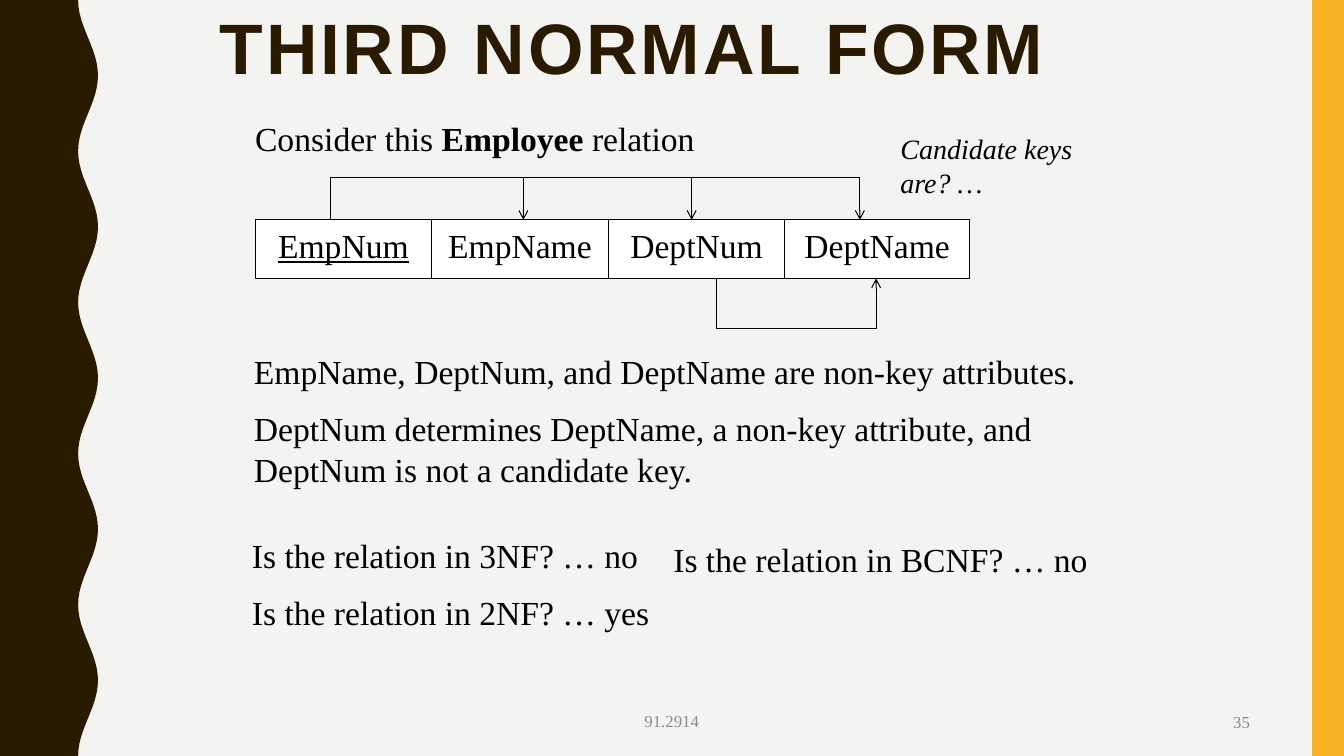
from math import cos, pi

from lxml.etree import SubElement
from pptx import Presentation
from pptx.dml.color import RGBColor
from pptx.enum.shapes import MSO_SHAPE as Shape
from pptx.enum.text import MSO_ANCHOR as Anchor, PP_ALIGN as Align
from pptx.oxml.ns import qn
from pptx.util import Cm, Pt

COLORS = {
    "background": "F3F3F2",
    "brown": "2A1A00",
    "gold": "F8B323",
    "black": "000000",
    "white": "FFFFFF",
    "footer": "8C8C8C",
    "number": "898989",
}
SLIDE_WIDTH, SLIDE_HEIGHT = 33.87, 19.05


def color(name):
    return RGBColor.from_string(COLORS[name])


def write_text(frame, paragraphs, size=24, font="Times New Roman", ink="black",
               bold=False, italic=False, underline=False, align=Align.LEFT,
               gap=12, line_spacing=None, tracking=0):
    """Fill a frame; a paragraph is a string or a list of (text, bold) pairs."""
    for index, content in enumerate(paragraphs):
        paragraph = frame.paragraphs[0] if index == 0 else frame.add_paragraph()
        paragraph.alignment = align
        paragraph.space_before = Pt(gap if index else 0)
        if line_spacing:
            paragraph.line_spacing = line_spacing
        pairs = [(content, bold)] if isinstance(content, str) else content
        for text, is_bold in pairs:
            run = paragraph.add_run()
            run.text = text
            run.font.name = font
            run.font.size = Pt(size)
            run.font.bold = is_bold
            run.font.italic = italic
            run.font.underline = underline
            run.font.color.rgb = color(ink)
            if tracking:
                run._r.get_or_add_rPr().set("spc", str(tracking * 100))


class SlideBuilder:
    """Holds the current slide and its line style."""

    line_width = Pt(0.75)

    def __init__(self, slide):
        self.slide = slide
        self.shapes = slide.shapes
        slide.background.fill.solid()
        slide.background.fill.fore_color.rgb = color("background")

    def style(self, shape, fill=None, outlined=False):
        shape.shadow.inherit = False
        if fill:
            shape.fill.solid()
            shape.fill.fore_color.rgb = color(fill)
        else:
            shape.fill.background()
        if outlined:
            shape.line.color.rgb = color("black")
            shape.line.width = self.line_width
        else:
            shape.line.fill.background()

    def rectangle(self, left, top, width, height, fill, outlined=False):
        shape = self.shapes.add_shape(
            Shape.RECTANGLE, Cm(left), Cm(top), Cm(width), Cm(height))
        self.style(shape, fill, outlined)
        return shape

    def cell(self, left, top, width, height, label, underline=False):
        frame = self.rectangle(left, top, width, height, "white", True).text_frame
        frame.vertical_anchor = Anchor.TOP
        write_text(frame, [label], align=Align.CENTER, underline=underline)

    def outline(self, points, close):
        points = [(Cm(x), Cm(y)) for x, y in points]
        builder = self.shapes.build_freeform(*points[0])
        builder.add_line_segments(points[1:], close=close)
        return builder.convert_to_shape()

    def arrow(self, *points):
        shape = self.outline(points, close=False)
        self.style(shape, outlined=True)
        SubElement(shape.line._get_or_add_ln(), qn("a:tailEnd"), type="arrow")

    def wave(self, middle, swing, period, steps=24):
        """Draw the left band, whose right edge is a cosine wave."""
        count = round(SLIDE_HEIGHT / period * steps)
        edge = [(middle - swing * cos(2 * pi * i / steps), i * period / steps)
                for i in range(count + 1)]
        shape = self.outline([(0, 0), *edge, (0, SLIDE_HEIGHT)], close=True)
        self.style(shape, "brown")

    def text(self, left, top, width, height, *paragraphs, wrap=True,
             anchor=Anchor.TOP, inset=0.25, **text_format):
        box = self.shapes.add_textbox(Cm(left), Cm(top), Cm(width), Cm(height))
        frame = box.text_frame
        frame.word_wrap = wrap
        frame.vertical_anchor = anchor
        frame.margin_left = Cm(inset)
        write_text(frame, paragraphs, **text_format)


def draw_relation(builder):
    left, top, width, height = 6.43, 5.54, 4.45, 1.48
    fields = ["EmpNum", "EmpName", "DeptNum", "DeptName"]
    for i, field in enumerate(fields):
        is_last = i == len(fields) - 1
        builder.cell(left + i * width, top, 4.65 if is_last else width, height,
                     field, underline=i == 0)

    rail, key_x, first_x, step = 4.47, 8.32, 13.19, 4.24
    builder.arrow((key_x, top), (key_x, rail), (first_x, rail), (first_x, top))
    for i in range(2):
        start, end = first_x + i * step, first_x + (i + 1) * step
        builder.arrow((start, rail), (end, rail), (end, top))

    bottom, low_rail, source_x, target_x = top + height, 8.28, 18.06, 22.08
    builder.arrow((source_x, bottom), (source_x, low_rail),
                  (target_x, low_rail), (target_x, bottom))


def main():
    presentation = Presentation()
    presentation.slide_width = Cm(SLIDE_WIDTH)
    presentation.slide_height = Cm(SLIDE_HEIGHT)
    builder = SlideBuilder(
        presentation.slides.add_slide(presentation.slide_layouts[6]))

    builder.wave(middle=2.22, swing=0.25, period=3.81)
    builder.rectangle(33.07, 0, 0.8, SLIDE_HEIGHT, "gold")
    builder.text(5.29, 0.21, 22.86, 3.18, "THIRD NORMAL FORM", size=51,
                 font="Arial", ink="brown", bold=True, line_spacing=0.9,
                 tracking=2)
    builder.text(12.91, 17.66, 8.04, 1.02, "91.2914", size=12, ink="footer",
                 align=Align.CENTER, anchor=Anchor.MIDDLE)
    builder.text(23.92, 17.71, 7.83, 0.97, "35", size=12, ink="number",
                 align=Align.RIGHT, anchor=Anchor.MIDDLE)

    draw_relation(builder)

    builder.text(6.15, 8.72, 22.01, 3.84,
                 "EmpName, DeptNum, and DeptName are non-key attributes.",
                 "DeptNum determines DeptName, a non-key attribute, and "
                 "DeptNum is not a candidate key.")
    builder.text(6.18, 2.84, 12.7, 1.28,
                 [("Consider this", False), (" Employee ", True),
                  ("relation", False)])
    builder.text(6.35, 13.36, 11, 2.82, "Is the relation in 3NF? … no",
                 "Is the relation in 2NF? … yes", inset=0)
    builder.text(16.72, 13.46, 10.95, 1.28, "Is the relation in BCNF? … no",
                 wrap=False)
    builder.text(22.44, 3.2, 5.29, 1.96, "Candidate keys are? …", size=20,
                 italic=True)

    presentation.save("out.pptx")


if __name__ == "__main__":
    main()
